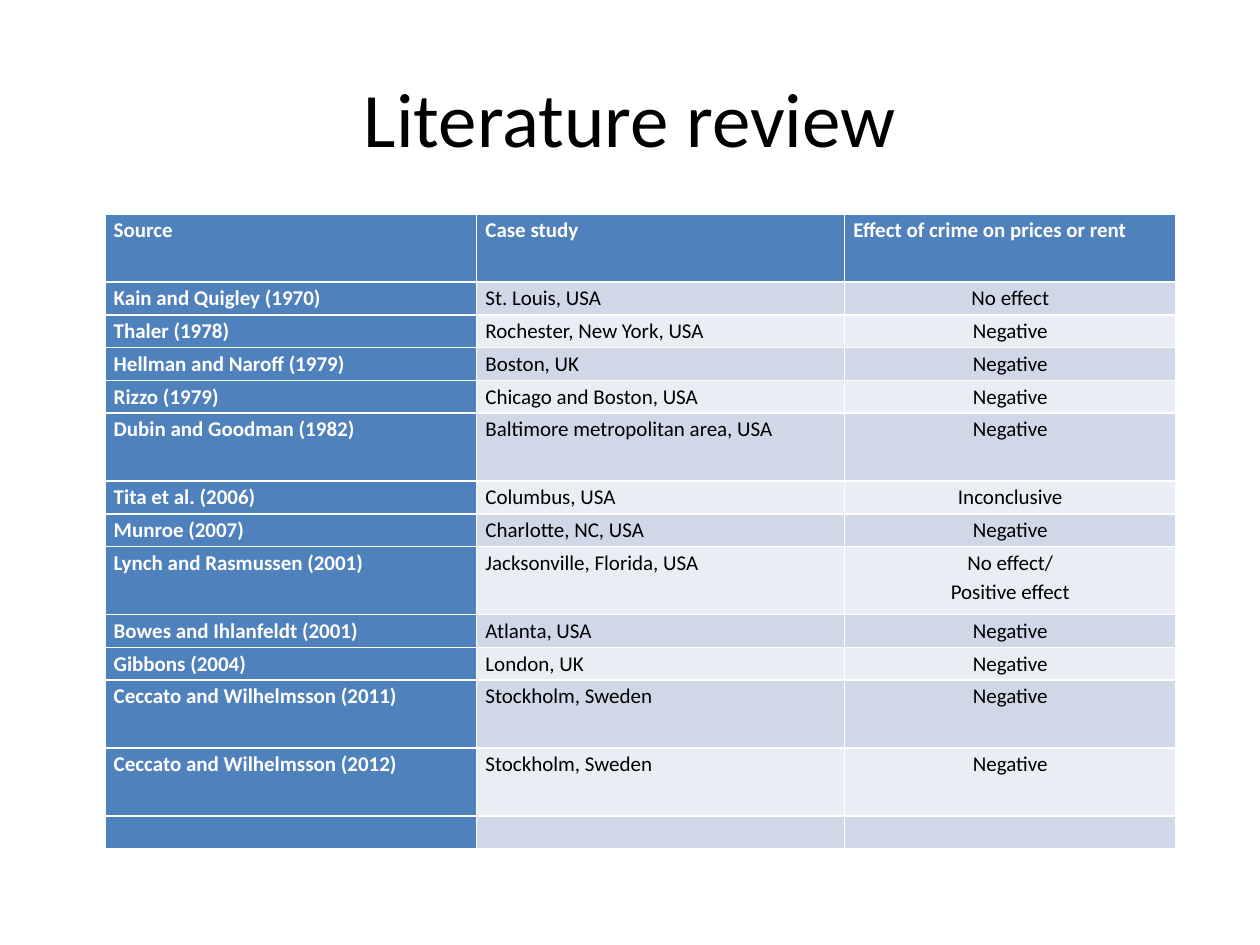
from typing import NamedTuple

from lxml.etree import SubElement
from pptx import Presentation
from pptx.dml.color import RGBColor
from pptx.enum.text import MSO_ANCHOR, PP_ALIGN as Align
from pptx.oxml.ns import qn
from pptx.table import _Cell as Cell
from pptx.util import Pt

FONT = "Calibri"
COLORS = {
    "accent": "4F81BD",
    "band_dark": "D0D8E8",
    "band_light": "E9EDF4",
    "white": "FFFFFF",
    "black": "000000",
}
TEXT_SIZE = 12
ONE_LINE, TWO_LINES = 18.72, 38.88
COLUMN_WIDTHS = (212.4, 210.24, 189.36)


class Study(NamedTuple):
    source: str
    place: str
    effect: str
    height: float = ONE_LINE


HEADER = Study("Source", "Case study", "Effect of crime on prices or rent", TWO_LINES)
STUDIES = [
    Study("Kain and Quigley (1970)", "St. Louis, USA", "No effect"),
    Study("Thaler (1978)", "Rochester, New York, USA", "Negative"),
    Study("Hellman and Naroff (1979)", "Boston, UK", "Negative"),
    Study("Rizzo (1979)", "Chicago and Boston, USA", "Negative"),
    Study("Dubin and Goodman (1982)", "Baltimore metropolitan area, USA", "Negative", TWO_LINES),
    Study("Tita et al. (2006)", "Columbus, USA", "Inconclusive"),
    Study("Munroe (2007)", "Charlotte, NC, USA", "Negative"),
    Study("Lynch and Rasmussen (2001)", "Jacksonville, Florida, USA",
          "No effect/\nPositive effect", TWO_LINES),
    Study("Bowes and Ihlanfeldt (2001)", "Atlanta, USA", "Negative"),
    Study("Gibbons (2004)", "London, UK", "Negative"),
    Study("Ceccato and Wilhelmsson (2011)", "Stockholm, Sweden", "Negative", TWO_LINES),
    Study("Ceccato and Wilhelmsson (2012)", "Stockholm, Sweden", "Negative", TWO_LINES),
    Study("", "", ""),
]


def rgb(name: str) -> RGBColor:
    return RGBColor.from_string(COLORS[name])


def fill_cell(cell: Cell, text: str, fill: str, align: Align, strong: bool) -> None:
    cell.fill.solid()
    cell.fill.fore_color.rgb = rgb(fill)
    cell.margin_left = cell.margin_right = Pt(5)
    cell.margin_top = cell.margin_bottom = Pt(0)
    cell.text = text
    for paragraph in cell.text_frame.paragraphs:
        paragraph.alignment = align
        paragraph.line_spacing = 1.15
        font = paragraph.font
        font.name, font.size, font.bold = FONT, Pt(TEXT_SIZE), strong
        font.color.rgb = rgb("white" if strong else "black")
        if not text:  # an empty line takes its height from the end mark
            SubElement(paragraph._p, qn("a:endParaRPr"), sz=str(TEXT_SIZE * 100))


def add_title(slide) -> None:
    title = slide.shapes.title
    title.left, title.top, title.width, title.height = Pt(36), Pt(21.6), Pt(648), Pt(90)
    title.text_frame.text = "Literature review"
    title.text_frame.vertical_anchor = MSO_ANCHOR.MIDDLE
    heading = title.text_frame.paragraphs[0]
    heading.alignment = Align.CENTER
    heading.font.name, heading.font.size = FONT, Pt(44)
    heading.font.color.rgb = rgb("black")


def add_review_table(slide) -> None:
    rows = [HEADER, *STUDIES]
    table = slide.shapes.add_table(
        len(rows), len(COLUMN_WIDTHS), Pt(60), Pt(122.4),
        Pt(sum(COLUMN_WIDTHS)), Pt(sum(row.height for row in rows)),
    ).table
    table.first_col = True
    for column, width in zip(table.columns, COLUMN_WIDTHS):
        column.width = Pt(width)

    for r, study in enumerate(rows):
        table.rows[r].height = Pt(study.height)
        is_header = r == 0
        band = "band_dark" if r % 2 else "band_light"
        aligns = [Align.JUSTIFY] * 3 if is_header else [Align.LEFT, Align.JUSTIFY, Align.CENTER]
        for c, (text, align) in enumerate(zip(study[:3], aligns)):
            strong = is_header or c == 0
            fill_cell(table.cell(r, c), text, "accent" if strong else band, align, strong)


def main() -> None:
    deck = Presentation()
    deck.slide_width, deck.slide_height = Pt(720), Pt(540)
    slide = deck.slides.add_slide(deck.slide_layouts[5])
    add_title(slide)
    add_review_table(slide)
    deck.save("out.pptx")


if __name__ == "__main__":
    main()
